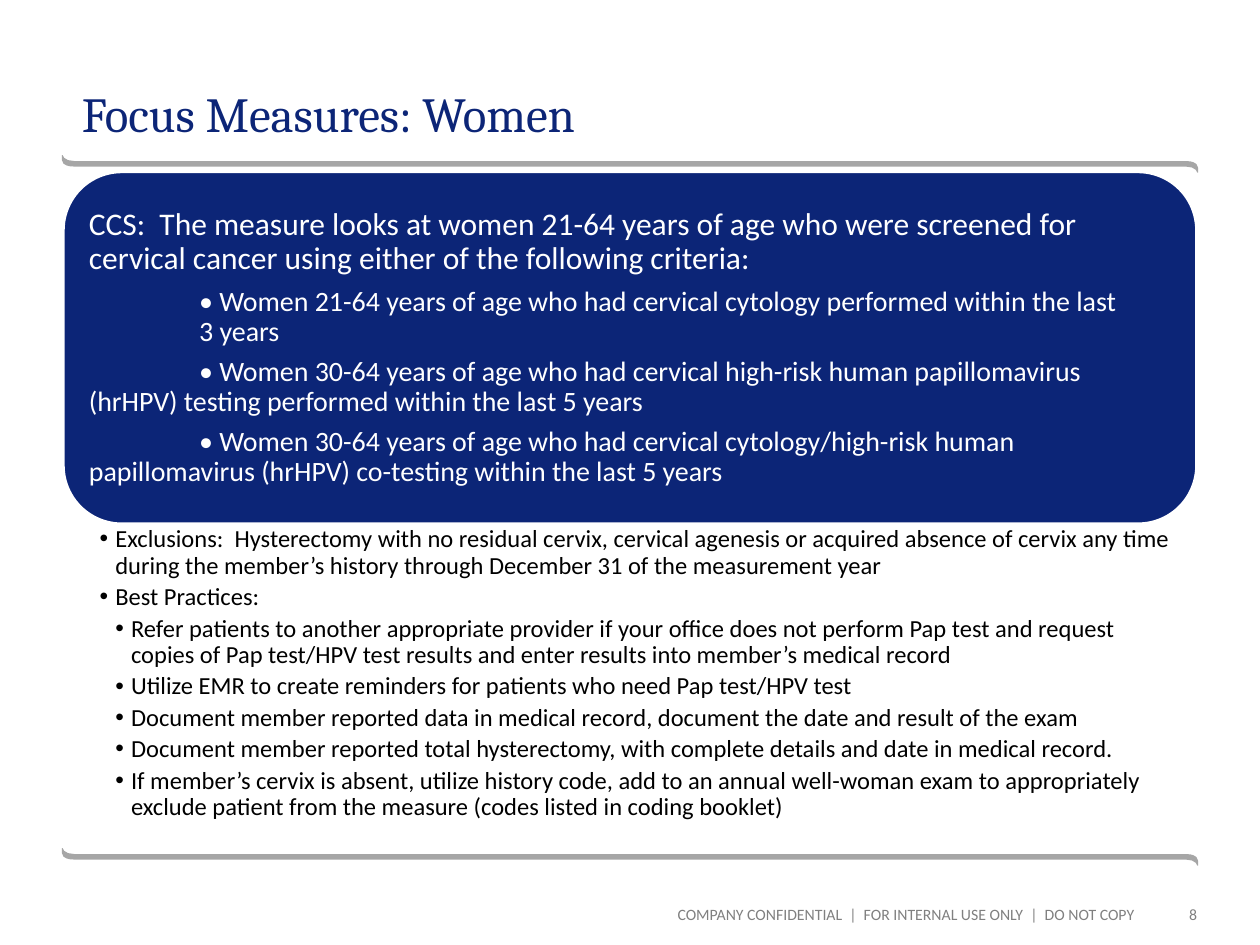
"""Build the slide on cervical cancer screening measures for women."""
import pptx
import pptx.chart.data
import pptx.dml.color
import pptx.enum.shapes
import pptx.enum.text
import pptx.oxml
import pptx.oxml.ns
import pptx.util

Pt = pptx.util.Pt
ALIGN = pptx.enum.text.PP_ALIGN
ANCHOR = pptx.enum.text.MSO_ANCHOR
COLORS = {"navy": "0C2577", "white": "FFFFFF", "black": "000000",
          "rule": "A6A6A6", "footer": "808080"}

TITLE = "Focus Measures: Women"
MEASURE = [
    ("CCS:  The measure looks at women 21-64 years of age who were screened for "
     "cervical cancer using either of the following criteria:", 18, 0, 0),
    ("• Women 21-64 years of age who had cervical cytology performed within the last\v"
     "3 years", 16, 63, 0),
    ("• Women 30-64 years of age who had cervical high-risk human papillomavirus\v"
     "(hrHPV) testing performed within the last 5 years", 16, 0, 63),
    ("• Women 30-64 years of age who had cervical cytology/high-risk human\v"
     "papillomavirus (hrHPV) co-testing within the last 5 years", 16, 0, 63),
]
DETAILS = [
    (0, "Exclusions:  Hysterectomy with no residual cervix, cervical agenesis or acquired "
        "absence of cervix any time during the member’s history through December 31 of "
        "the measurement year"),
    (0, "Best Practices:"),
    (1, "Refer patients to another appropriate provider if your office does not perform Pap "
        "test and request copies of Pap test/HPV test results and enter results into "
        "member’s medical record"),
    (1, "Utilize EMR to create reminders for patients who need Pap test/HPV test"),
    (1, "Document member reported data in medical record, document the date and result "
        "of the exam"),
    (1, "Document member reported total hysterectomy, with complete details and date in "
        "medical record."),
    (1, "If member’s cervix is absent, utilize history code, add to an annual well-woman "
        "exam to appropriately exclude patient from the measure (codes listed in coding "
        "booklet)"),
]
FOOTERS = [
    ("COMPANY CONFIDENTIAL  |  FOR INTERNAL USE ONLY  |  DO NOT COPY", 246.2, 401.8),
    ("8", 653.8, 30.2),
]
RULE_LEFT, RULE_TOPS, RULE_W, RULE_H = 35.3, (88.6, 484.6), 649.4, 10
HOOK = [(7.2, 3.4), (3.6, 2.9), (1.4, 1.6), (0.5, 0), (0, 0), (0.1, 2.9),
        (1, 4.9), (2.7, 5.9), (4.5, 6.4), (7.2, 6.6)]


def rgb(name):
    return pptx.dml.color.RGBColor.from_string(COLORS[name])


def apply(obj, values):
    for name, value in values.items():
        setattr(obj, name, value)


def place(sp, left, top, width, height):
    apply(sp, {"left": Pt(left), "top": Pt(top), "width": Pt(width), "height": Pt(height)})


def frame(sp, anchor, left, top, right, bottom):
    tf = sp.text_frame
    apply(tf, {"word_wrap": True, "auto_size": pptx.enum.text.MSO_AUTO_SIZE.NONE,
               "vertical_anchor": anchor, "margin_left": Pt(left), "margin_top": Pt(top),
               "margin_right": Pt(right), "margin_bottom": Pt(bottom)})
    return tf


def write(tf, i, text, size, color, font="Calibri", align=ALIGN.LEFT,
          indent=None, bullet=False, **spacing):
    p = tf.paragraphs[0] if i == 0 else tf.add_paragraph()
    p.text = text
    if indent:
        pPr = p._p.get_or_add_pPr()
        pPr.set("marL", str(Pt(indent[0])))
        pPr.set("indent", str(Pt(indent[1])))
        if bullet:
            pPr.append(pptx.oxml.parse_xml(
                f'<a:buChar {pptx.oxml.ns.nsdecls("a")} char="•"/>'))
    apply(p, {"alignment": align, "space_before": Pt(0), **spacing})
    for r in p.runs:
        apply(r.font, {"name": font, "size": Pt(size)})
        r.font.color.rgb = rgb(color)
    return p


def add_rule(s, top):
    outline = HOOK + [(RULE_W - x, RULE_H - y) for x, y in HOOK]
    points = [(Pt(RULE_LEFT + x), Pt(top + y)) for x, y in outline]
    builder = s.shapes.build_freeform(*points[0])
    builder.add_line_segments(points[1:], close=True)
    sp = builder.convert_to_shape()
    sp.shadow.inherit = False
    sp.fill.solid()
    sp.fill.fore_color.rgb = rgb("rule")
    sp.line.fill.background()


def add_measure(s):
    sp = s.shapes.add_shape(pptx.enum.shapes.MSO_SHAPE.ROUNDED_RECTANGLE,
                            Pt(36), Pt(98), Pt(648), Pt(201.6))
    sp.shadow.inherit = False
    sp.fill.solid()
    sp.fill.fore_color.rgb = rgb("navy")
    sp.line.color.rgb = rgb("white")
    sp.line.width = Pt(2)
    tf = frame(sp, ANCHOR.MIDDLE, 5, 5, 5, 5)
    for i, (text, size, margin, first) in enumerate(MEASURE):
        write(tf, i, text, size, "white", indent=(margin, first),
              line_spacing=0.9, space_after=Pt(size * 0.35))


def main():
    prs = pptx.Presentation()
    apply(prs, {"slide_width": Pt(720), "slide_height": Pt(540)})
    s = prs.slides.add_slide(prs.slide_layouts[1])
    title, body = s.placeholders[0], s.placeholders[1]

    place(title, 36, 5.8, 648, 79.2)
    write(frame(title, ANCHOR.BOTTOM, 10.8, 3.6, 7.2, 3.6), 0, TITLE, 28, "navy", "Cambria")

    place(body, 36, 299.5, 648, 196.6)
    tf = frame(body, ANCHOR.TOP, 20.9, 1.4, 7.9, 1.4)
    for i, (level, text) in enumerate(DETAILS):
        write(tf, i, text, 14, "black", indent=(9 * (level + 1), -9), bullet=True,
              level=level, line_spacing=0.9, space_after=Pt(2.8))

    for top in RULE_TOPS:
        add_rule(s, top)
    add_measure(s)
    for text, left, width in FOOTERS:
        sp = s.shapes.add_textbox(Pt(left), Pt(517), Pt(width), Pt(10.8))
        write(frame(sp, ANCHOR.MIDDLE, 0, 0, 0, 0), 0, text, 9, "footer", align=ALIGN.RIGHT)
    prs.save("out.pptx")


if __name__ == "__main__":
    main()
